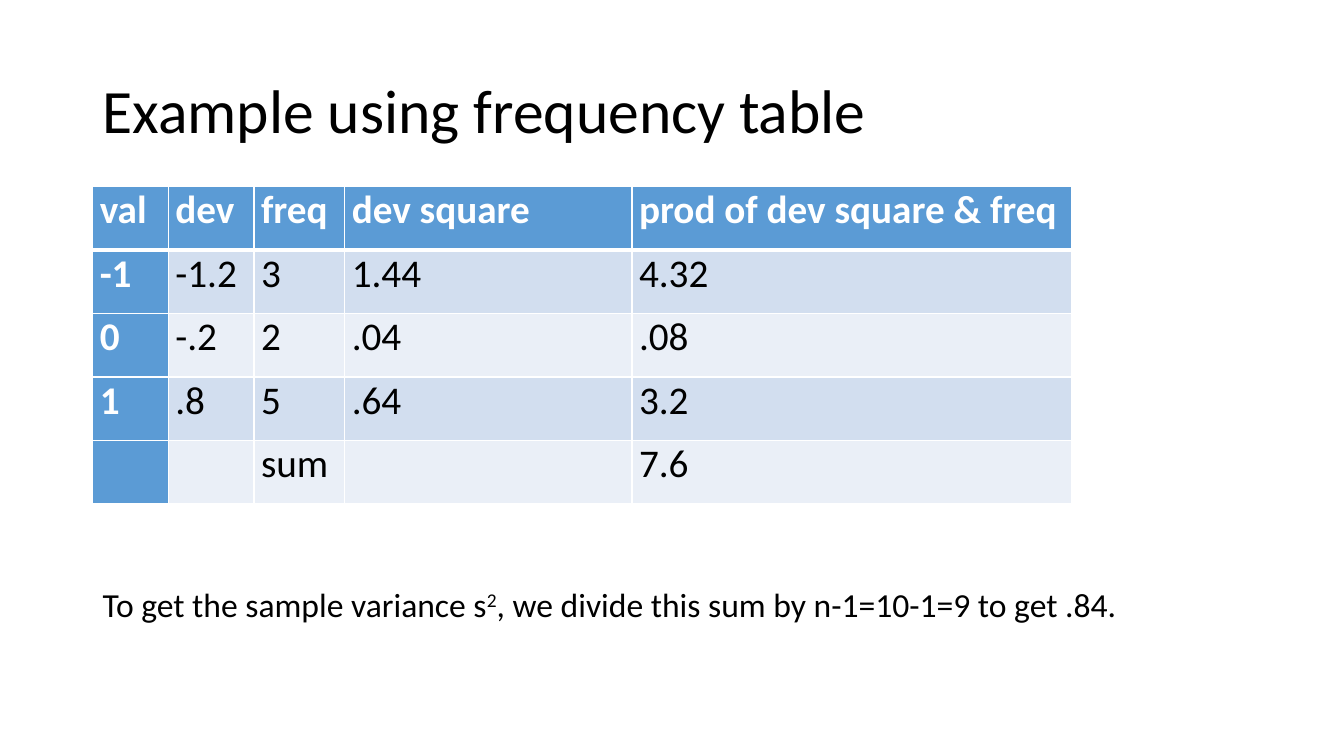
"""Build a slide that works out a sample variance from a frequency table."""
from lxml.etree import SubElement as Sub
from pptx import Presentation
from pptx.dml.color import RGBColor as RGB
from pptx.enum.text import MSO_ANCHOR as Anchor
from pptx.oxml.ns import qn
from pptx.util import Pt

TITLE = "Example using frequency table"
NOTE = [
    ("To get the sample variance s", False),
    ("2", True),
    (", we divide this sum by n-1=10-1=9 to get .84.", False),
]
ROWS = [
    ("val", "dev", "freq", "dev square", "prod of dev square & freq"),
    ("-1", "-1.2", "3", "1.44", "4.32"),
    ("0", "-.2", "2", ".04", ".08"),
    ("1", ".8", "5", ".64", "3.2"),
    ("", "", "sum", "", "7.6"),
]
WIDTHS = (54, 61.2, 64.8, 205.2, 313.92)
HIGH = 45.36
LEFT = 66.24
THEME = {
    "font": "Calibri", "ink": "000000", "white": "FFFFFF", "head": "5B9BD5",
    "bands": ("EAEFF7", "D2DEEF"), "title": 44, "cell": 28, "note": 24,
}


def write(para, text, size, color=THEME["ink"], bold=False, sup=False):
    """Add one formatted run to a paragraph."""
    run = para.add_run()
    run.text = text
    font = run.font
    font.name, font.size, font.bold = THEME["font"], Pt(size), bold
    font.color.rgb = RGB.from_string(color)
    if sup:
        run._r.get_or_add_rPr().set("baseline", "30000")


def add_box(slide, top, width, height, wrap, anchor):
    """Add a text box at the left margin and return its frame."""
    box = slide.shapes.add_textbox(Pt(LEFT), Pt(top), Pt(width), Pt(height))
    frame = box.text_frame
    frame.word_wrap, frame.vertical_anchor = wrap, anchor
    return frame


def edge(cell, side, width):
    """Draw a white border on one side of a cell."""
    line = Sub(cell._tc.get_or_add_tcPr(), qn(f"a:ln{side}"), w=str(Pt(width)))
    Sub(Sub(line, qn("a:solidFill")), qn("a:srgbClr"), val=THEME["white"])


def fill_cell(cell, text, row, col):
    """Style one cell by its place in the table."""
    head = row == 0 or col == 0
    for side in "LRTB":
        thick = (row, side) in ((0, "B"), (1, "T"))
        edge(cell, side, 3 if thick else 1)
    cell.fill.solid()
    tone = THEME["head"] if head else THEME["bands"][row % 2]
    cell.fill.fore_color.rgb = RGB.from_string(tone)
    cell.margin_left = cell.margin_right = Pt(5.04)
    cell.margin_top = cell.margin_bottom = Pt(0)
    if text:
        ink = THEME["white"] if head else THEME["ink"]
        write(cell.text_frame.paragraphs[0], text, THEME["cell"], ink, head)


def add_grid(slide):
    """Add the frequency table."""
    shape = slide.shapes.add_table(
        len(ROWS), len(WIDTHS), Pt(LEFT), Pt(133.2),
        Pt(sum(WIDTHS)), Pt(HIGH * len(ROWS)))
    grid = shape.table
    grid.first_col = True
    for col, width in zip(grid.columns, WIDTHS):
        col.width = Pt(width)
    for row, texts in enumerate(ROWS):
        grid.rows[row].height = Pt(HIGH)
        for col, text in enumerate(texts):
            fill_cell(grid.cell(row, col), text, row, col)


def main():
    """Lay out the slide and save it."""
    deck = Presentation()
    deck.slide_width, deck.slide_height = Pt(960), Pt(540)
    slide = deck.slides.add_slide(deck.slide_layouts[6])
    title = add_box(slide, 28.8, 828, 104.4, True, Anchor.MIDDLE).paragraphs[0]
    title.line_spacing = 0.9
    write(title, TITLE, THEME["title"])
    add_grid(slide)
    note = add_box(slide, 413.28, 751.68, 36, False, Anchor.TOP).paragraphs[0]
    for text, sup in NOTE:
        write(note, text, THEME["note"], sup=sup)
    deck.save("out.pptx")


if __name__ == "__main__":
    main()
